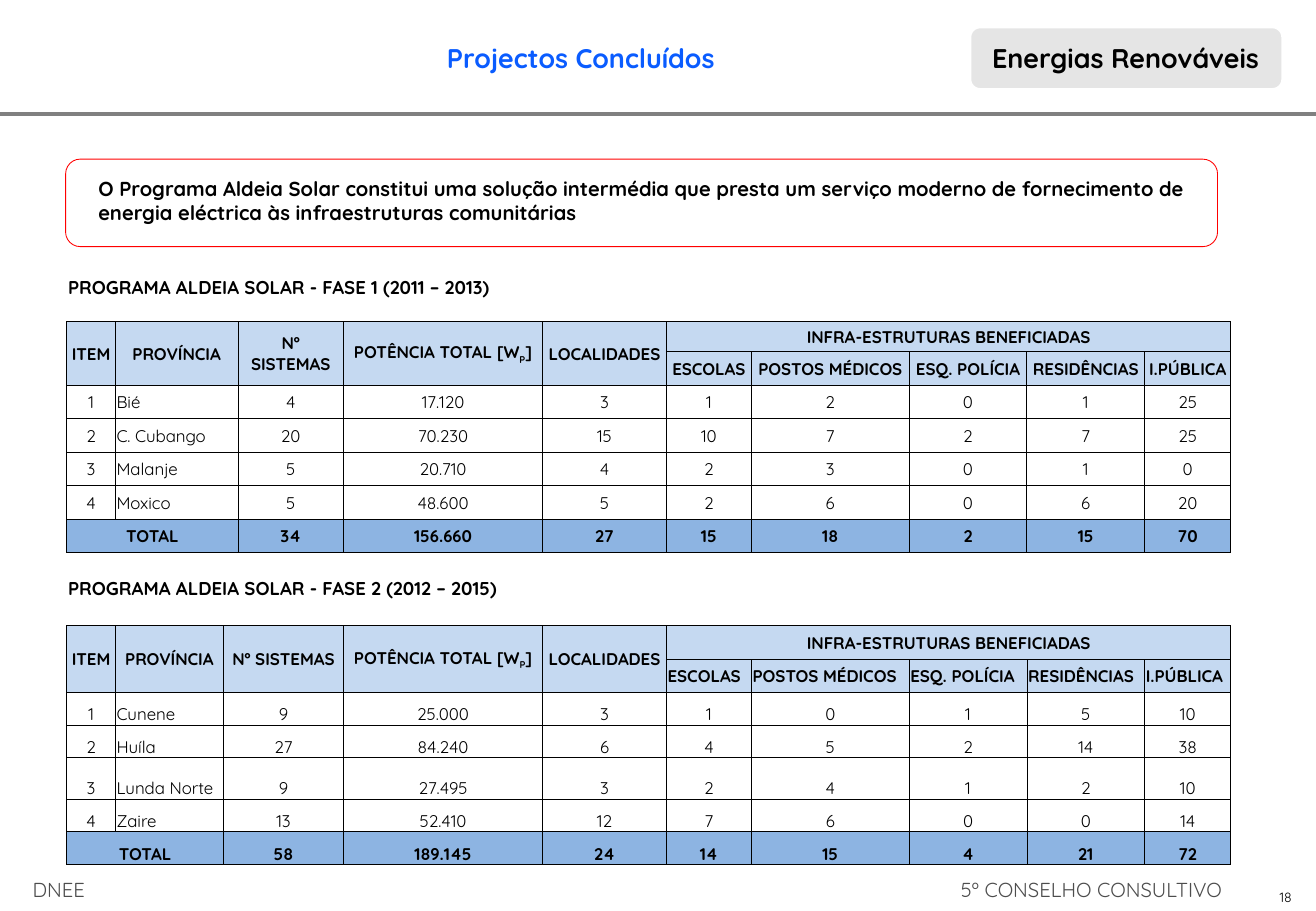
from dataclasses import dataclass
from lxml import etree
from pptx import Presentation
from pptx import util as u
from pptx.dml.color import RGBColor
from pptx.enum import shapes, text
from pptx.oxml.ns import qn


@dataclass(frozen=True)
class Theme:
    face: str = "Quicksand"
    ink: str = "000000"
    blue: str = "0A5CFF"
    rule: str = "808080"
    foot: str = "4D4D4D"
    tag: str = "D9D9D9"
    edge: str = "FFFFFF"
    red: str = "FF0000"
    head: str = "C5D9F1"
    total: str = "8DB4E2"
    big: int = 16
    mid: int = 12
    name: int = 11
    cell: int = 10
    tiny: int = 8


T = Theme()
WIDE, HIGH = u.Inches(10.83), u.Inches(7.5)
LEFT, MID, RIGHT = text.PP_ALIGN.LEFT, text.PP_ALIGN.CENTER, text.PP_ALIGN.RIGHT
ANCHOR = text.MSO_ANCHOR

TOP = ["ITEM", "PROVÍNCIA", "Nº SISTEMAS", "POTÊNCIA TOTAL [W|P|]", "LOCALIDADES",
       "INFRA-ESTRUTURAS BENEFICIADAS"]
SUB = ["ESCOLAS", "POSTOS MÉDICOS", "ESQ. POLÍCIA", "RESIDÊNCIAS", "I.PÚBLICA"]
ONE = [
    ["1", "Bié", "4", "17.120", "3", "1", "2", "0", "1", "25"],
    ["2", "C. Cubango", "20", "70.230", "15", "10", "7", "2", "7", "25"],
    ["3", "Malanje", "5", "20.710", "4", "2", "3", "0", "1", "0"],
    ["4", "Moxico", "5", "48.600", "5", "2", "6", "0", "6", "20"],
    ["TOTAL", "", "34", "156.660", "27", "15", "18", "2", "15", "70"],
]
TWO = [
    ["1", "Cunene", "9", "25.000", "3", "1", "0", "1", "5", "10"],
    ["2", "Huíla", "27", "84.240", "6", "4", "5", "2", "14", "38"],
    ["3", "Lunda Norte", "9", "27.495", "3", "2", "4", "1", "2", "10"],
    ["4", "Zaire", "13", "52.410", "12", "7", "6", "0", "0", "14"],
    ["TOTAL", "", "58", "189.145", "24", "14", "15", "4", "21", "72"],
]


def area(x, y, w, h):
    return [int(part * side / 100) for part, side in zip((x, y, w, h), (WIDE, HIGH) * 2)]


def write(para, words, size, color=T.ink, bold=False, align=LEFT):
    if "|" in words:
        for i, part in enumerate(words.split("|")):
            run = para.add_run()
            run.text = part
            if i % 2:
                run._r.get_or_add_rPr().set("baseline", "-25000")
    else:
        para.text = words
    para.alignment = align
    font = para.font
    font.name, font.size, font.bold = T.face, u.Pt(size), bold
    font.color.rgb = RGBColor.from_string(color)


def label(slide, at, words, size, wrap=True, tab=None, **look):
    frame = slide.shapes.add_textbox(*area(*at)).text_frame
    frame.word_wrap = wrap
    para = frame.paragraphs[0]
    if tab:
        tabs = etree.SubElement(para._p.get_or_add_pPr(), qn("a:tabLst"))
        etree.SubElement(tabs, qn("a:tab"), pos=str(int(WIDE * tab / 100)), algn="r")
    write(para, words, size, **look)


def panel(slide, kind, at, fill, line, width):
    shape = slide.shapes.add_shape(kind, *area(*at))
    shape.shadow.inherit = False
    if fill:
        shape.fill.solid()
        shape.fill.fore_color.rgb = RGBColor.from_string(fill)
    else:
        shape.fill.background()
    shape.line.color.rgb = RGBColor.from_string(line)
    shape.line.width = u.Pt(width)
    return shape


def badge(slide, at, words):
    shape = panel(slide, shapes.MSO_SHAPE.ROUNDED_RECTANGLE, at, T.tag, T.edge, 2)
    tint = shape._element.spPr.find(qn("a:solidFill"))[0]
    etree.SubElement(tint, qn("a:alpha"), val="67000")
    frame = shape.text_frame
    frame.margin_left, frame.margin_right = u.Inches(0.16), u.Inches(0.04)
    frame.vertical_anchor = ANCHOR.MIDDLE
    write(frame.paragraphs[0], words, T.big, bold=True)


def border(cell, sides):
    props = cell._tc.get_or_add_tcPr()
    for side in "LRTB":
        line = etree.SubElement(props, qn(f"a:ln{side}"), w=str(u.Pt(0.5)))
        if side in sides:
            fill = etree.SubElement(line, qn("a:solidFill"))
            etree.SubElement(fill, qn("a:srgbClr"), val=T.ink)
        else:
            etree.SubElement(line, qn("a:noFill"))


def style(cell, row, last):
    border(cell, "" if row == 0 else "B" if row == 1 else "LRTB")
    color = T.head if row in (2, 3) else T.total if row == last else None
    if color:
        cell.fill.solid()
        cell.fill.fore_color.rgb = RGBColor.from_string(color)
    else:
        cell.fill.background()
    cell.margin_left = cell.margin_right = cell.margin_top = u.Inches(0.01)
    cell.margin_bottom = 0


def phase(slide, at, cols, rows, name, top, data, anchor, side):
    x, y, w, h = area(*at)
    table = slide.shapes.add_table(len(rows), len(cols), x, y, w, h).table
    table.first_row = table.horz_banding = False
    for col, part in zip(table.columns, cols):
        col.width = int(w * part / sum(cols))
    for row, part in zip(table.rows, rows):
        row.height = int(h * part / sum(rows))
    last, end = len(rows) - 1, len(cols) - 1
    grid = [[name], [], top, [""] * 5 + SUB] + data
    for r, line in enumerate(grid):
        for c in range(len(cols)):
            cell = table.cell(r, c)
            style(cell, r, last)
            cell.vertical_anchor = (ANCHOR.BOTTOM if r < 2 else
                                    ANCHOR.MIDDLE if r < 4 else anchor)
            align = (LEFT if r == 0 or (3 < r < last and c == 1) else
                     side if r == 3 else MID)
            words = line[c] if c < len(line) else ""
            size = T.name if r == 0 and words else T.cell if words else T.tiny
            write(cell.text_frame.paragraphs[0], words, size,
                  bold=r < 4 or r == last, align=align)
    spans = [(0, 0, 0, 3), (2, 5, 2, end), (last, 0, last, 1)]
    spans += [(2, c, 3, c) for c in range(5)]
    for r, c, low, far in spans:
        table.cell(r, c).merge(table.cell(low, far))


def main():
    deck = Presentation()
    deck.slide_width, deck.slide_height = WIDE, HIGH
    slide = deck.slides.add_slide(deck.slide_layouts[6])
    panel(slide, shapes.MSO_SHAPE.RECTANGLE, (0, 12.4, 100, 0.27), T.rule, T.rule, 1)
    label(slide, (90.95, 96.93, 8.13, 3.2), "18", T.tiny, align=RIGHT)
    label(slide, (1.57, 95.6, 95.29, 4), "DNEE\t5º CONSELHO CONSULTIVO", T.mid,
          tab=90.4, color=T.foot)
    tail = [164, 102, 70, 130, 97, 97, 71]
    phase(slide, (5.08, 30.13, 88.46, 30.53), [40, 101, 87] + tail,
          [19, 19, 24] + [27] * 6, "PROGRAMA ALDEIA SOLAR - FASE 1 (2011 – 2013)",
          [word.replace("Nº ", "Nº\v") for word in TOP], ONE, ANCHOR.MIDDLE, MID)
    phase(slide, (5.08, 63.07, 88.46, 31.87), [40, 89, 99] + tail,
          [21, 21, 28, 27, 27, 27, 34, 27, 27],
          "PROGRAMA ALDEIA SOLAR - FASE 2 (2012 – 2015)", TOP, TWO, ANCHOR.BOTTOM, LEFT)
    label(slide, (33.06, 3.87, 22.99, 4.93), "Projectos Concluídos", T.big,
          wrap=False, color=T.blue, bold=True)
    badge(slide, (73.68, 2.93, 23.82, 6.93), "Energias Renováveis")
    label(slide, (6.56, 18.67, 88.83, 6.67),
          "O Programa Aldeia Solar constitui uma solução intermédia que presta um serviço "
          "moderno de fornecimento de energia eléctrica às infraestruturas comunitárias",
          T.mid, bold=True)
    panel(slide, shapes.MSO_SHAPE.ROUNDED_RECTANGLE, (4.99, 17.47, 87.53, 9.6),
          None, T.red, 0.5)
    deck.save("out.pptx")


if __name__ == "__main__":
    main()
